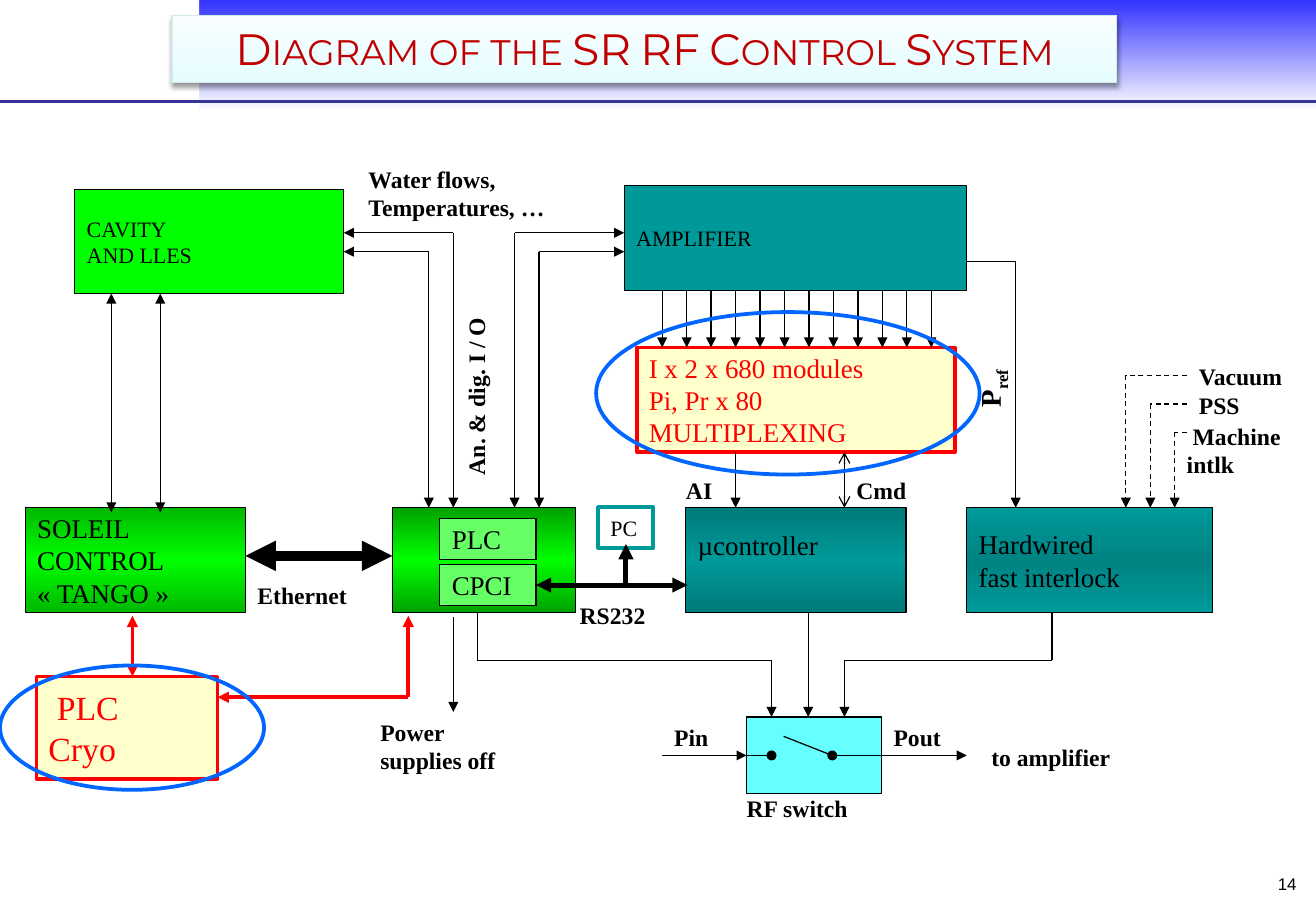
from copy import deepcopy

from lxml import etree
from pptx import Presentation
from pptx.dml.color import RGBColor
from pptx.enum import dml, shapes, text
from pptx.oxml.ns import qn
from pptx.util import Pt

BLACK = RGBColor(0x00, 0x00, 0x00)
WHITE = RGBColor(0xFF, 0xFF, 0xFF)
RED = RGBColor(0xFF, 0x00, 0x00)
DARK_RED = RGBColor(0xC0, 0x00, 0x00)
BLUE = RGBColor(0x00, 0x66, 0xFF)
BANNER_BLUE = RGBColor(0x33, 0x33, 0xFF)
NAVY = RGBColor(0x33, 0x33, 0x99)
LIME = RGBColor(0x00, 0xFF, 0x00)
TANGO_GREEN = RGBColor(0x00, 0xB9, 0x00)
PLC_GREEN = RGBColor(0x00, 0xA2, 0x00)
PALE_GREEN = RGBColor(0x66, 0xFF, 0x66)
TEAL = RGBColor(0x00, 0x99, 0x99)
DEEP_TEAL = RGBColor(0x00, 0x7B, 0x7B)
MID_TEAL = RGBColor(0x00, 0x83, 0x83)
CREAM = RGBColor(0xFF, 0xFF, 0xCC)
CYAN = RGBColor(0x66, 0xFF, 0xFF)
TITLE_STOPS = [(0, RGBColor(0xE6, 0xFD, 0xFF)), (0.35, RGBColor(0xEC, 0xFD, 0xFF)),
               (1, RGBColor(0xF8, 0xFE, 0xFF))]
TITLE_EDGE = RGBColor(0xD5, 0xE8, 0xEA)

SERIF = "Times New Roman"
STEP = 14.5
LEFT = 392.5
AMP_BOTTOM, MUX_TOP, MUX_BOTTOM = 172, 206, 268
ROW_TOP, ROW_BOTTOM = 301, 363
BUS_Y, SWITCH_TOP, SWITCH_Y = 391.5, 425, 447.8


def col(n):
    return LEFT + n * STEP


def set_gradient(sp, stops, angle):
    sp.fill.gradient()
    sp.fill.gradient_angle = angle
    gs_list = sp._element.spPr.find(".//" + qn("a:gsLst"))
    while len(gs_list) < len(stops):
        gs_list.append(deepcopy(gs_list[0]))
    for stop, (position, color) in zip(sp.fill.gradient_stops, stops):
        stop.position = position
        stop.color.rgb = color


def banded(edge, middle):
    return [(0, edge), (0.5, middle), (1, edge)]


def add_outline(s, kind, rect, fill, line=None, width=0.75, angle=270):
    sp = s.shapes.add_shape(kind, *map(Pt, rect))
    sp.shadow.inherit = False
    if fill is None:
        sp.fill.background()
    elif isinstance(fill, list):
        set_gradient(sp, fill, angle)
    else:
        sp.fill.solid()
        sp.fill.fore_color.rgb = fill
    if line is None:
        sp.line.fill.background()
    else:
        sp.line.color.rgb = line
        sp.line.width = Pt(width)
    return sp


def write(tf, words, size, color=BLACK, bold=False, font=SERIF, indent=0,
          align=text.PP_ALIGN.LEFT):
    tf.word_wrap = True
    tf.text = words
    if indent:
        tf.paragraphs[0]._p.get_or_add_pPr().set("indent", str(Pt(indent)))
    for p in tf.paragraphs:
        p.alignment = align
        for r in p.runs:
            style(r, size, color, bold, font)


def style(r, size, color=BLACK, bold=False, font=SERIF):
    r.font.size = Pt(size)
    r.font.name = font
    r.font.bold = bold
    r.font.color.rgb = color


def add_box(s, rect, fill, words="", size=16, color=BLACK, line=BLACK, width=0.75,
            indent=0):
    sp = add_outline(s, shapes.MSO_SHAPE.RECTANGLE, rect, fill, line, width)
    if words:
        sp.text_frame.vertical_anchor = text.MSO_ANCHOR.MIDDLE
        write(sp.text_frame, words, size, color, indent=indent)
    return sp


def add_label(s, rect, words, size=14, rotation=0, indent=0):
    tb = s.shapes.add_textbox(*map(Pt, rect))
    tb.rotation = rotation
    write(tb.text_frame, words, size, bold=True, indent=indent)
    return tb


def add_route(s, points, head=None, tail=None, color=BLACK, width=0.75, dashed=False):
    last = len(points) - 2
    for i, (start, end) in enumerate(zip(points, points[1:])):
        c = s.shapes.add_connector(shapes.MSO_CONNECTOR.STRAIGHT, *map(Pt, start + end))
        c.line.color.rgb = color
        c.line.width = Pt(width)
        if dashed:
            c.line.dash_style = dml.MSO_LINE.DASH
        ln = c.line._get_or_add_ln()
        if head and i == 0:
            etree.SubElement(ln, qn("a:headEnd"), type=head)
        if tail and i == last:
            etree.SubElement(ln, qn("a:tailEnd"), type=tail)
        etree.SubElement(c._element.spPr, qn("a:effectLst"))


def add_banner(s):
    rect = shapes.MSO_SHAPE.RECTANGLE
    add_outline(s, rect, (0, 0, 780, 66), [(0, BANNER_BLUE), (1, WHITE)])
    add_outline(s, rect, (0, 0, 118, 71), WHITE)
    add_route(s, [(0, 60.3), (780, 60.3)], color=NAVY, width=1.5)
    number = s.shapes.add_textbox(Pt(724.5), Pt(514), Pt(51), Pt(21))
    write(number.text_frame, "14", 10, font="Arial", align=text.PP_ALIGN.RIGHT)


def add_title(s):
    sp = add_outline(s, shapes.MSO_SHAPE.RECTANGLE, (102, 9.2, 560, 39.8), TITLE_STOPS,
                     TITLE_EDGE, angle=90)
    effects = sp._element.spPr.find(qn("a:effectLst"))
    shadow = etree.SubElement(effects, qn("a:outerShdw"), blurRad=str(Pt(3.1)),
                              dist=str(Pt(1.6)), dir="5400000", rotWithShape="0")
    shade = etree.SubElement(shadow, qn("a:srgbClr"), val="000000")
    etree.SubElement(shade, qn("a:alpha"), val="38000")
    tf = sp.text_frame
    tf.vertical_anchor = text.MSO_ANCHOR.TOP
    p = tf.paragraphs[0]
    p.alignment = text.PP_ALIGN.CENTER
    for big, small in [("D", "IAGRAM OF THE "), ("SR", " "), ("RF", " "),
                       ("C", "ONTROL "), ("S", "YSTEM")]:
        for words, size in [(big, 26), (small, 21)]:
            r = p.add_run()
            r.text = words
            style(r, size, DARK_RED, font="Montserrat")


def add_units(s):
    add_box(s, (370, 110, 203, 62), TEAL, "AMPLIFIER", 13)
    add_box(s, (44.3, 112.4, 159.5, 61.6), LIME, "CAVITY\nAND LLES", 13)
    add_box(s, (15, ROW_TOP, 130.5, 62), banded(TANGO_GREEN, LIME),
            "SOLEIL\nCONTROL\n« TANGO »")
    add_box(s, (232.5, ROW_TOP, 108.7, 62), banded(PLC_GREEN, LIME))
    micro = add_box(s, (406.5, ROW_TOP, 130.5, 62), banded(DEEP_TEAL, TEAL), "µcontroller")
    micro.text_frame.margin_bottom = Pt(22)
    add_box(s, (573, ROW_TOP, 145.5, 62), banded(TEAL, MID_TEAL), "Hardwired\nfast interlock")
    add_box(s, (377.5, MUX_TOP, 188.5, 62), CREAM,
            "I x 2 x 680 modules\nPi, Pr x 80\nMULTIPLEXING", 16, RED, RED, 2.25)
    add_box(s, (442.5, SWITCH_TOP, 80, 45.5), CYAN)
    for top, words in [(307.2, "PLC"), (334.6, "CPCI")]:
        add_box(s, (260.7, top, 57, 24.5), PALE_GREEN, words)
    add_box(s, (21.6, 401, 107.3, 60.7), CREAM, "PLC\nCryo", 20, RED, RED, 2.25, indent=5)


def add_wiring(s):
    for n in range(12):
        add_route(s, [(col(n), AMP_BOTTOM), (col(n), MUX_TOP)], tail="triangle")
    add_route(s, [(col(3), MUX_BOTTOM), (col(3), ROW_TOP)], tail="triangle")
    add_route(s, [(500.5, MUX_BOTTOM), (500.5, ROW_TOP)], "arrow", "triangle" and "arrow")
    for unit_x, drop_x, y in [(203.8, 268.7, 138), (203.8, 254.2, 149.2),
                              (370, 305, 138), (370, 319.5, 149.2)]:
        add_route(s, [(unit_x, y), (drop_x, y), (drop_x, ROW_TOP)], "triangle", "triangle")
    for x in (66, 95):
        add_route(s, [(x, 174), (x, 303.7)], "triangle", "triangle")
    add_route(s, [(573, 155), (602, 155), (602, ROW_TOP)], tail="triangle")
    for x, y in [(667.3, 222.5), (681.8, 239.5), (696.3, 256.3)]:
        add_route(s, [(703.5, y), (x, y), (x, ROW_TOP)], tail="triangle", dashed=True)
    add_route(s, [(145.5, 329.5), (232.5, 329.5)], "triangle", "triangle", width=6)
    add_route(s, [(317.7, 346.8), (407.5, 346.8)], "triangle", "triangle", width=3)
    for source_x, target_x in [(283, 457.3), (479, 479), (623.5, 500.5)]:
        add_route(s, [(source_x, ROW_BOTTOM), (source_x, BUS_Y), (target_x, BUS_Y),
                      (target_x, SWITCH_TOP)] if source_x != target_x else
                  [(source_x, ROW_BOTTOM), (source_x, SWITCH_TOP)], tail="triangle")
    add_route(s, [(LEFT, SWITCH_Y), (442.5, SWITCH_Y)], tail="triangle")
    add_route(s, [(457.3, SWITCH_Y), (442.5, SWITCH_Y)], "oval")
    add_route(s, [(493.3, SWITCH_Y), (464.5, 436.5)], "oval")
    add_route(s, [(493.3, SWITCH_Y), (573, SWITCH_Y)], tail="triangle")
    add_route(s, [(268.7, 366), (268.7, 422)], tail="triangle")
    add_route(s, [(129, 413.3), (242, 413.3), (242, 365)], "triangle", "triangle", RED, 2.25)
    add_route(s, [(78.5, 401), (78.5, 365)], "triangle", "triangle", RED, 2.25)


def add_labels(s):
    for rect, words in [((399.5, 278.7, 43, 24.3), "AI"),
                        ((500.5, 278.7, 58, 24.3), "Cmd"),
                        ((145.5, 340.5, 123, 24.3), "Ethernet"),
                        ((703.5, 211.2, 80, 24.3), "Vacuum"),
                        ((703.5, 228, 65, 24.3), "PSS"),
                        ((211.3, 94, 159, 41.5), "Water flows,\nTemperatures, …"),
                        ((LEFT, 425, 43, 24.3), "Pin"),
                        ((522.5, 425, 65, 24.3), "Pout"),
                        ((580.5, 436.5, 130, 24.3), "to amplifier"),
                        ((218.3, 422, 101.5, 41.5), "Power supplies off"),
                        ((435.5, 466.8, 94, 24.3), "RF switch"),
                        ((336.5, 352.8, 65.5, 24.3), "RS232")]:
        add_label(s, rect, words)
    add_label(s, (696.3, 246.3, 87, 41), "Machine intlk", indent=3.5)
    add_label(s, (223.2, 217.6, 118, 24.3), "An. & dig. I / O", rotation=270)
    pref = add_label(s, (564, 211.7, 45.4, 28), "P", 17, rotation=270)
    r = pref.text_frame.paragraphs[0].add_run()
    r.text = "ref"
    style(r, 17, bold=True)
    r.font._element.set("baseline", "-25000")


def add_highlights(s):
    for rect in [(0, 394.5, 156.5, 73.7), (353.3, 185, 227.3, 96.3)]:
        add_outline(s, shapes.MSO_SHAPE.OVAL, rect, None, BLUE, 2.25)
    add_box(s, (354.7, 300.7, 32.6, 24), WHITE, "PC", 13, line=TEAL, width=2.25)
    add_route(s, [(371, 346.8), (371, 322.5)], tail="triangle", width=3)


def main():
    prs = Presentation()
    prs.slide_width, prs.slide_height = Pt(780), Pt(540)
    s = prs.slides.add_slide(prs.slide_layouts[6])
    for draw in (add_banner, add_units, add_wiring, add_labels, add_highlights, add_title):
        draw(s)
    prs.save("out.pptx")


if __name__ == "__main__":
    main()
